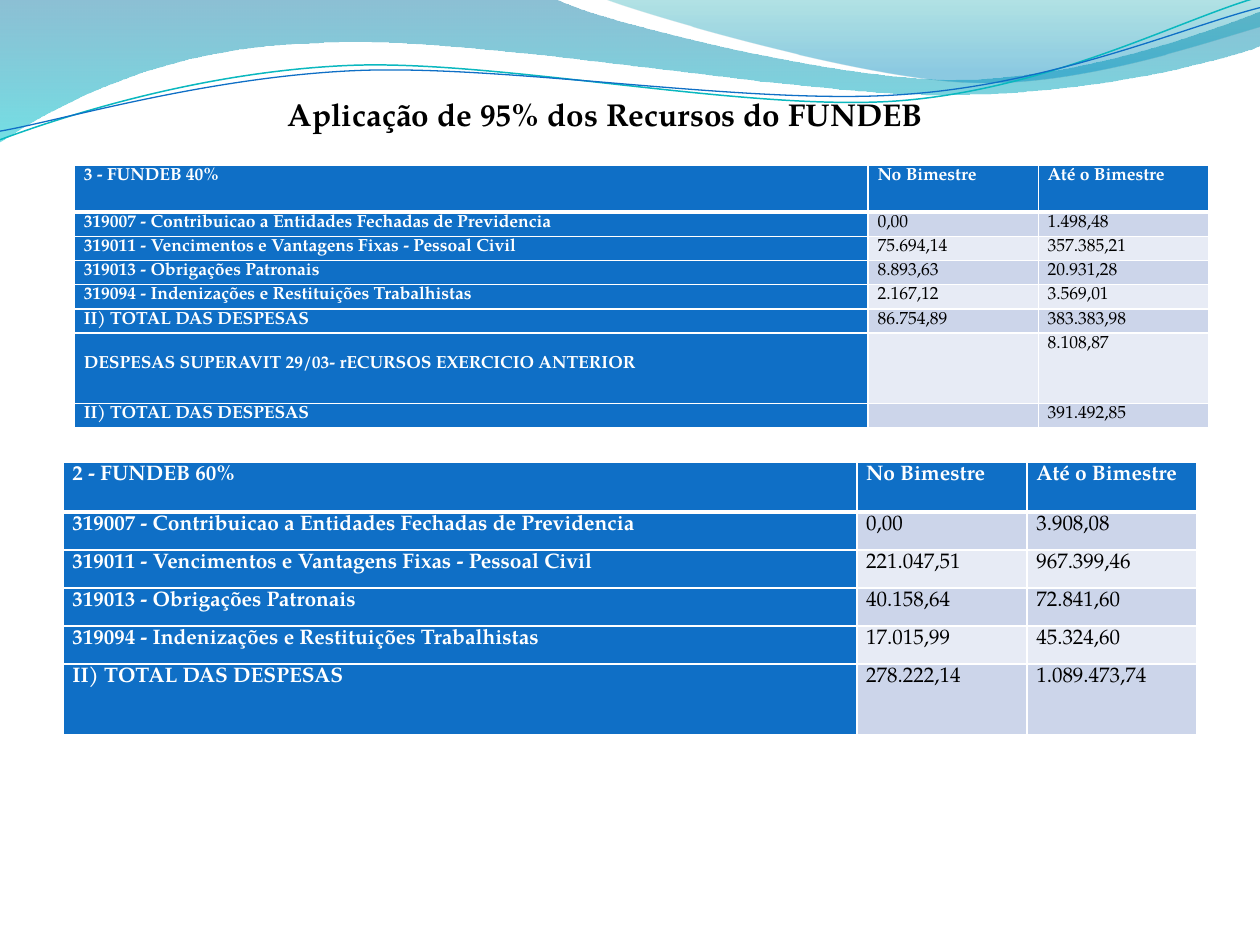
from lxml.etree import SubElement
from pptx import Presentation
from pptx.dml.color import RGBColor
from pptx.enum.text import MSO_AUTO_SIZE
from pptx.oxml.ns import qn
from pptx.util import Inches, Pt

COLUMNS, ROWS = 100, 75
FONT = "TeX Gyre Pagella"
WHITE, BLACK, BLUE = "FFFFFF", "000000", "0F6FC6"
BANDS = "CCD5EA", "E7EBF5"
TABLE_COLUMNS = 63, 13.5, 13.5


def color(value):
    return RGBColor.from_string(value)


class Deck:
    def __init__(self):
        self.prs = Presentation()
        self.prs.slide_width, self.prs.slide_height = Inches(10), Inches(7.5)
        self.s = self.prs.slides.add_slide(self.prs.slide_layouts[6])

    def x(self, columns):
        return round(self.prs.slide_width * columns / COLUMNS)

    def y(self, rows):
        return round(self.prs.slide_height * rows / ROWS)

    def curve(self, start, segments, closed):
        builder = self.s.shapes.build_freeform(self.x(start[0]), self.y(start[1]))
        points = [(self.x(px), self.y(py)) for segment in segments
                  for px, py in zip(segment[::2], segment[1::2])]
        builder.add_line_segments(points, close=closed)
        sp = builder.convert_to_shape()
        sp.shadow.inherit = False
        lines = iter(list(sp._element.spPr.iter(qn("a:lnTo"))))
        for segment in segments:
            first = next(lines)
            if len(segment) == 6:
                bezier = first.makeelement(qn("a:cubicBezTo"))
                first.addprevious(bezier)
                for line in (first, next(lines), next(lines)):
                    bezier.append(line[0])
                    line.getparent().remove(line)
        return sp

    def wave(self, start, segments, stops):
        sp = self.curve(start, segments, True)
        sp.line.fill.background()
        sp.fill.gradient()
        sp.fill.gradient_angle = 270
        for stop, (position, value, _) in zip(sp.fill.gradient_stops, stops):
            stop.position = position
            stop.color.rgb = color(value)
        for clr, (_, _, opacity) in zip(sp._element.spPr.iter(qn("a:srgbClr")), stops):
            SubElement(clr, qn("a:alpha"), val=str(opacity * 1000))

    def strand(self, start, segments, value, width):
        sp = self.curve(start, segments, False)
        sp.rotation = 357.3
        sp.fill.background()
        sp.line.color.rgb = color(value)
        sp.line.width = Pt(width)

    def style(self, p, size, value, bold):
        for r in p.runs:
            r.font.name, r.font.size, r.font.bold = FONT, Pt(size), bold
            r.font.color.rgb = color(value)

    def title(self, text, left, top, width, height):
        sp = self.s.shapes.add_textbox(self.x(left), self.y(top), self.x(width), self.y(height))
        tf = sp.text_frame
        tf.word_wrap = True
        tf.auto_size = MSO_AUTO_SIZE.SHAPE_TO_FIT_TEXT
        tf.text = text
        self.style(tf.paragraphs[0], 18, BLACK, True)

    def border(self, cell, top, bottom):
        tcPr = cell._tc.get_or_add_tcPr()
        for side, width in (("L", 1), ("R", 1), ("T", top), ("B", bottom)):
            ln = SubElement(tcPr, qn("a:ln" + side), w=str(Pt(width)))
            SubElement(SubElement(ln, qn("a:solidFill")), qn("a:srgbClr"), val=WHITE)

    def cell(self, cell, text, row, column, size):
        heading = row == 0 or column == 0
        cell.margin_left = cell.margin_right = self.x(0.75)
        cell.margin_top = cell.margin_bottom = 0
        self.border(cell, 3 if row == 1 else 1, 3 if row == 0 else 1)
        cell.fill.solid()
        cell.fill.fore_color.rgb = color(BLUE if heading else BANDS[(row - 1) % 2])
        p = cell.text_frame.paragraphs[0]
        p.text = text
        p.line_spacing = 1.15
        self.style(p, size, WHITE if heading else BLACK, heading)
        if not text:
            SubElement(p._p, qn("a:endParaRPr"), sz=str(size * 100))

    def table(self, left, top, heights, size, records):
        table = self.s.shapes.add_table(
            len(records), len(TABLE_COLUMNS), self.x(left), self.y(top),
            self.x(sum(TABLE_COLUMNS)), self.y(sum(heights))).table
        for column, width in zip(table.columns, TABLE_COLUMNS):
            column.width = self.x(width)
        for i, (height, record) in enumerate(zip(heights, records)):
            table.rows[i].height = self.y(height)
            for j, text in enumerate(record):
                self.cell(table.cell(i, j), text, i, j, size)
        return table


def main():
    deck = Deck()
    deck.wave((0, 0), [
        (44, -0.1), (47.6, 1.7, 66.4, 6.3, 75.8, 6.3), (85.3, 6.3, 95.8, 2.6, 100, 0.9),
        (100.1, 3.6), (98.3, 4.4, 87, 7.6, 74.6, 7.5), (62.2, 7.5, 38.2, 2.8, 25.7, 3.4),
        (12.9, 3.6, 4.6, 8.3, -0.1, 11.3),
    ], [(0, "0074A1", 45), (1, "00C6CF", 55)])
    deck.wave((47.9, -0.1), [
        (50.9, 1.1, 68.2, 6.2, 76.9, 6.5), (85.6, 6.9, 96.1, 3.2, 100, 2.1), (100, 0),
    ], [(0, "00A1A9", 30), (0.8, "008BBF", 45)])
    deck.strand((-0.2, 8.74), [
        (4.68, 7.18, 15.84, 4.09, 27.75, 4.15), (39.56, 4.21, 59.14, 9.34, 71.17, 9.01),
        (83.2, 8.67, 93.95, 3.57, 100.03, 2.16),
    ], "0AB8BF", 0.85)
    deck.strand((-0.16, 8.05), [
        (4.58, 7.47, 16.43, 4.52, 28.34, 4.58), (40.35, 4.65, 59.57, 8.86, 71.6, 8.52),
        (83.53, 8.28, 94.23, 4.18, 100.19, 2.97),
    ], BLUE, 0.75)
    deck.title("Aplicação de 95% dos Recursos do FUNDEB", 21.86, 7.05, 68, 4)

    periods = "No Bimestre", "Até o Bimestre"
    pension = "319007 - Contribuicao a Entidades Fechadas de Previdencia"
    wages = "319011 - Vencimentos e Vantagens Fixas - Pessoal Civil"
    charges = "319013 - Obrigações Patronais"
    severance = "319094 - Indenizações e Restituições Trabalhistas"
    total = "II) TOTAL DAS DESPESAS"
    deck.table(5, 36.7, [3.94] + [3.02] * 4 + [5.6], 12, [
        ("2 - FUNDEB 60%", *periods),
        (pension, "0,00", "3.908,08"),
        (wages, "221.047,51", "967.399,46"),
        (charges, "40.158,64", "72.841,60"),
        (severance, "17.015,99", "45.324,60"),
        (total, "278.222,14", "1.089.473,74"),
    ])
    fundeb_40 = deck.table(5.9, 13.1, [3.74] + [1.84] * 5 + [5.6, 1.84], 10, [
        ("3 - FUNDEB 40%", *periods),
        (pension, "0,00", "1.498,48"),
        (wages, "75.694,14", "357.385,21"),
        (charges, "8.893,63", "20.931,28"),
        (severance, "2.167,12", "3.569,01"),
        (total, "86.754,89", "383.383,98"),
        ("DESPESAS SUPERAVIT 29/03- rECURSOS EXERCICIO ANTERIOR", "", "8.108,87"),
        (total, "", "391.492,85"),
    ])
    fundeb_40.cell(6, 0).margin_top = deck.y(1.6)
    deck.prs.save("out.pptx")


if __name__ == "__main__":
    main()
